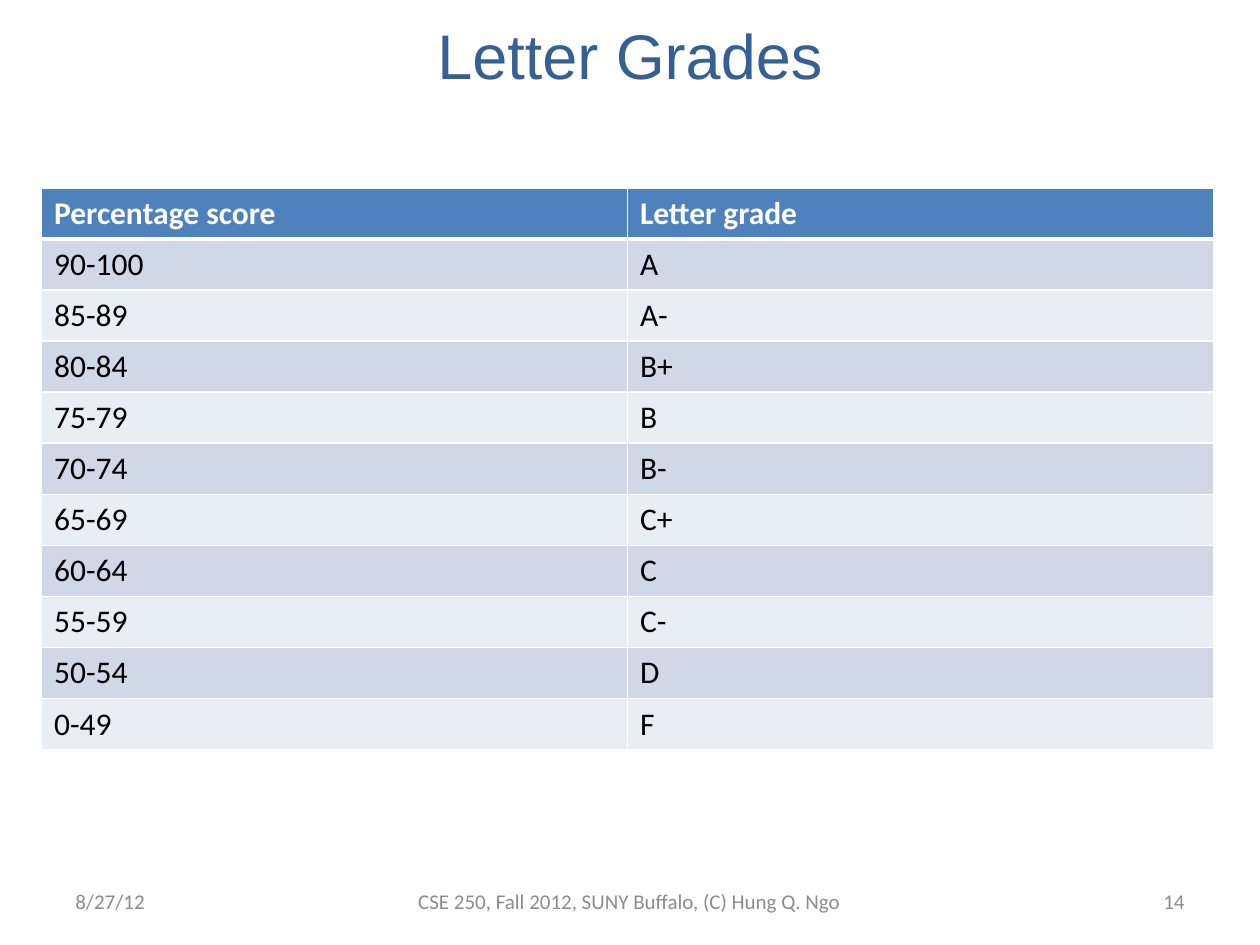
from dataclasses import dataclass

from lxml import etree
from pptx import Presentation, util as u
from pptx.dml.color import RGBColor
from pptx.enum import text
from pptx.oxml.ns import qn

GRADES = [
    ("Percentage score", "Letter grade"),
    ("90-100", "A"),
    ("85-89", "A-"),
    ("80-84", "B+"),
    ("75-79", "B"),
    ("70-74", "B-"),
    ("65-69", "C+"),
    ("60-64", "C"),
    ("55-59", "C-"),
    ("50-54", "D"),
    ("0-49", "F"),
]
TABLE_BOX = (0.33, 1.49, 9.3, 4.46)


@dataclass(frozen=True)
class Theme:
    title: tuple = (36, "Arial", "376092", False)
    header: tuple = (18, "Calibri", "FFFFFF", True)
    body: tuple = (18, "Calibri", "000000", False)
    footer: tuple = (12, "Calibri", "8C8C8C", False)
    header_fill: str = "4F81BD"
    bands: tuple = ("D0D8E8", "E9EDF4")
    border: str = "FFFFFF"


THEME = Theme()
LEFT, CENTER, RIGHT = (text.PP_ALIGN.LEFT, text.PP_ALIGN.CENTER,
                       text.PP_ALIGN.RIGHT)
TEXTS = [
    ("Letter Grades", (0, 0.07, 10, 0.73), THEME.title, CENTER),
    ("8/27/12", (0.5, 6.95, 2.33, 0.4), THEME.footer, LEFT),
    ("CSE 250, Fall 2012, SUNY Buffalo, (C) Hung Q. Ngo",
     (2.92, 6.95, 4.15, 0.4), THEME.footer, CENTER),
    ("14", (7.17, 6.95, 2.33, 0.4), THEME.footer, RIGHT),
]


def inches(box):
    return [u.Inches(v) for v in box]


def write(tf, words, style, align=LEFT):
    size, font, color, bold = style
    p = tf.paragraphs[0]
    p.alignment = align
    r = p.add_run()
    r.text = words
    for name, value in {"size": u.Pt(size), "name": font, "bold": bold}.items():
        setattr(r.font, name, value)
    r.font.color.rgb = RGBColor.from_string(color)


def add_text(s, words, box, style, align):
    tf = s.shapes.add_textbox(*inches(box)).text_frame
    for name, value in {"word_wrap": True,
                        "vertical_anchor": text.MSO_ANCHOR.MIDDLE}.items():
        setattr(tf, name, value)
    write(tf, words, style, align)


def set_borders(cell, widths):
    tc_pr = cell._tc.get_or_add_tcPr()
    for side, width in widths.items():
        ln = etree.SubElement(tc_pr, qn(f"a:ln{side}"), w=str(u.Pt(width)))
        fill = etree.SubElement(ln, qn("a:solidFill"))
        etree.SubElement(fill, qn("a:srgbClr"), val=THEME.border)


def add_grades(s):
    table = s.shapes.add_table(len(GRADES), len(GRADES[0]),
                               *inches(TABLE_BOX)).table
    for i, row in enumerate(GRADES):
        style = THEME.body if i else THEME.header
        fill = THEME.bands[(i - 1) % 2] if i else THEME.header_fill
        widths = {"L": 1, "R": 1, "T": 3 if i == 1 else 1, "B": 1 if i else 3}
        for j, words in enumerate(row):
            cell = table.cell(i, j)
            set_borders(cell, widths)
            cell.fill.solid()
            cell.fill.fore_color.rgb = RGBColor.from_string(fill)
            write(cell.text_frame, words, style)


def main():
    prs = Presentation()
    prs.slide_width, prs.slide_height = inches((10, 7.5))
    s = prs.slides.add_slide(prs.slide_layouts[6])
    add_grades(s)
    for item in TEXTS:
        add_text(s, *item)
    prs.save("out.pptx")


if __name__ == "__main__":
    main()
